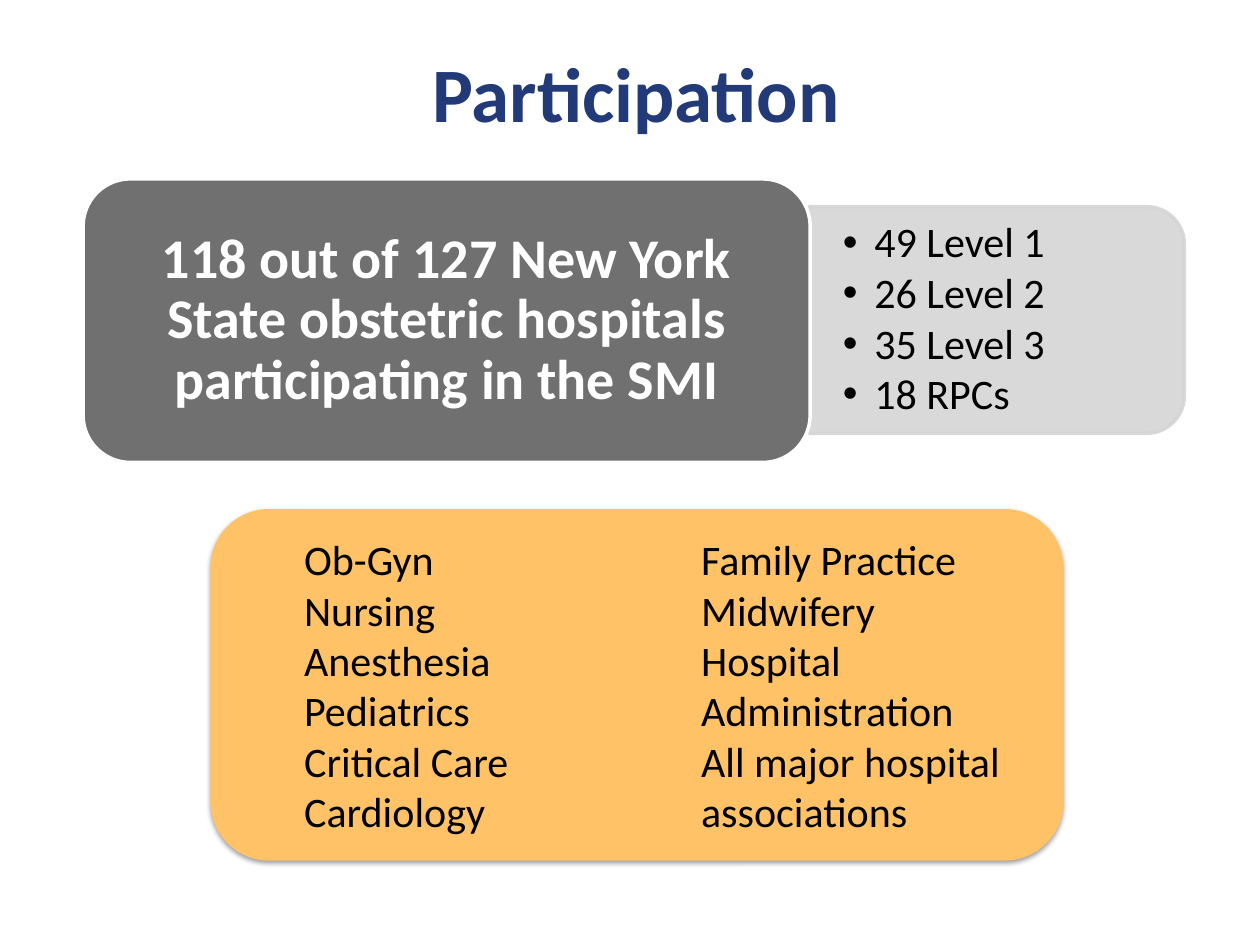
from dataclasses import dataclass

from lxml import etree
from pptx import Presentation
from pptx.dml.color import RGBColor
from pptx.enum.shapes import MSO_SHAPE
from pptx.enum.text import MSO_ANCHOR, MSO_AUTO_SIZE, PP_ALIGN
from pptx.oxml import parse_xml
from pptx.oxml.ns import nsdecls, qn
from pptx.util import Inches, Pt

ROUNDED = MSO_SHAPE.ROUNDED_RECTANGLE
ROUND_TOP = MSO_SHAPE.ROUND_2_SAME_RECTANGLE
ALTERNATE = MSO_SHAPE.FLOWCHART_ALTERNATE_PROCESS
MIDDLE = MSO_ANCHOR.MIDDLE
CENTER, LEFT = PP_ALIGN.CENTER, PP_ALIGN.LEFT
GROW = MSO_AUTO_SIZE.SHAPE_TO_FIT_TEXT


@dataclass(frozen=True)
class Theme:
    font: str = "Calibri"
    navy: str = "223A78"
    gray: str = "707070"
    light: str = "D5D5D5"
    orange: str = "FFC266"
    white: str = "FFFFFF"
    black: str = "000000"
    title: int = 44
    headline: int = 32
    body: int = 24


THEME = Theme()
LEVELS = ["49 Level 1", "26 Level 2", "35 Level 3", "18 RPCs"]
FIELDS = ["Ob-Gyn", "Nursing", "Anesthesia", "Pediatrics", "Critical Care",
          "Cardiology", "Family Practice", "Midwifery",
          "Hospital Administration", "All major hospital associations"]


def add_box(slide, kind, box, fill, line=None):
    s = slide.shapes.add_shape(kind, *map(Inches, box))
    s.shadow.inherit = False
    s.fill.solid()
    s.fill.fore_color.rgb = RGBColor.from_string(fill)
    if line:
        s.line.color.rgb = RGBColor.from_string(line)
        s.line.width = Pt(2)
    else:
        s.line.fill.background()
    return s


def add_text_box(slide, box, inset_x, inset_y):
    tf = slide.shapes.add_textbox(*map(Inches, box)).text_frame
    tf.margin_left = tf.margin_right = Inches(inset_x)
    tf.margin_top = tf.margin_bottom = Inches(inset_y)
    return tf


def write(tf, lines, size, color, align=LEFT, bold=False, spacing=None,
          after=0, margin=0, bullet=False):
    tf.word_wrap = True
    tf.vertical_anchor = MIDDLE
    tf.text = "\n".join(lines)
    for p in tf.paragraphs:
        p.alignment = align
        p.space_after = Pt(after)
        if spacing:
            p.line_spacing = spacing
        pPr = p._p.get_or_add_pPr()
        pPr.set("marL", str(Inches(margin)))
        pPr.set("indent", str(-Inches(margin) if bullet else 0))
        if bullet:
            etree.SubElement(pPr, qn("a:buFont")).set("typeface", "Arial")
            etree.SubElement(pPr, qn("a:buChar")).set("char", "•")
        for r in p.runs:
            r.font.name = THEME.font
            r.font.size = Pt(size)
            r.font.bold = bold
            r.font.color.rgb = RGBColor.from_string(color)


def add_title(slide, box):
    tf = add_text_box(slide, box, 0.1, 0.05)
    write(tf, ["Participation"], THEME.title, THEME.navy, CENTER, bold=True)


def add_levels(slide, box):
    x, y, w, h = box
    # The panel is a tall shape turned a quarter, so its round corners face right
    upright = (x + (w - h) / 2, y + (h - w) / 2, h, w)
    panel = add_box(slide, ROUND_TOP, upright, THEME.light, THEME.light)
    panel.rotation = 90
    for color in panel._element.spPr.iter(qn("a:srgbClr")):
        etree.SubElement(color, qn("a:alpha")).set("val", "90000")
    tf = add_text_box(slide, (x, y + 0.09, w - 0.09, h - 0.18), 0.27, 0.14)
    write(tf, LEVELS, THEME.body, THEME.black, spacing=0.9, after=3,
          margin=0.25, bullet=True)


def add_headline(slide, box):
    x, y, w, h = box
    pad = 0.11
    add_box(slide, ROUNDED, box, THEME.gray, THEME.white)
    inner = (x + pad, y + pad, w - 2 * pad, h - 2 * pad)
    tf = add_text_box(slide, inner, 0.13, 0.07)
    write(tf, ["118 out of 127 New York State obstetric hospitals "
               "participating in the SMI"],
          THEME.headline, THEME.white, CENTER, bold=True, spacing=0.9)


def add_fields(slide, box):
    s = add_box(slide, ALTERNATE, box, THEME.orange)
    # Soft shadow straight below
    spPr = s._element.spPr
    spPr.remove(spPr.find(qn("a:effectLst")))
    spPr.append(parse_xml(
        f'<a:effectLst {nsdecls("a")}><a:outerShdw blurRad="{Pt(3)}" '
        f'dist="{Pt(1.6)}" dir="5400000" rotWithShape="0">'
        f'<a:srgbClr val="{THEME.black}"><a:alpha val="38000"/></a:srgbClr>'
        '</a:outerShdw></a:effectLst>'))
    # Two text columns
    tf = s.text_frame
    write(tf, FIELDS, THEME.body, THEME.black, margin=0.51)
    tf.auto_size = GROW
    tf._txBody.bodyPr.set("numCol", "2")


def main():
    prs = Presentation()
    prs.slide_width, prs.slide_height = Inches(10), Inches(7.5)
    slide = prs.slides.add_slide(prs.slide_layouts[6])
    add_title(slide, (0.55, 0.25, 9, 0.95))
    add_levels(slide, (6.42, 1.64, 2.98, 1.8))
    add_headline(slide, (0.66, 1.42, 5.77, 2.25))
    add_fields(slide, (1.67, 4.04, 6.77, 2.79))
    prs.save("out.pptx")


if __name__ == "__main__":
    main()
